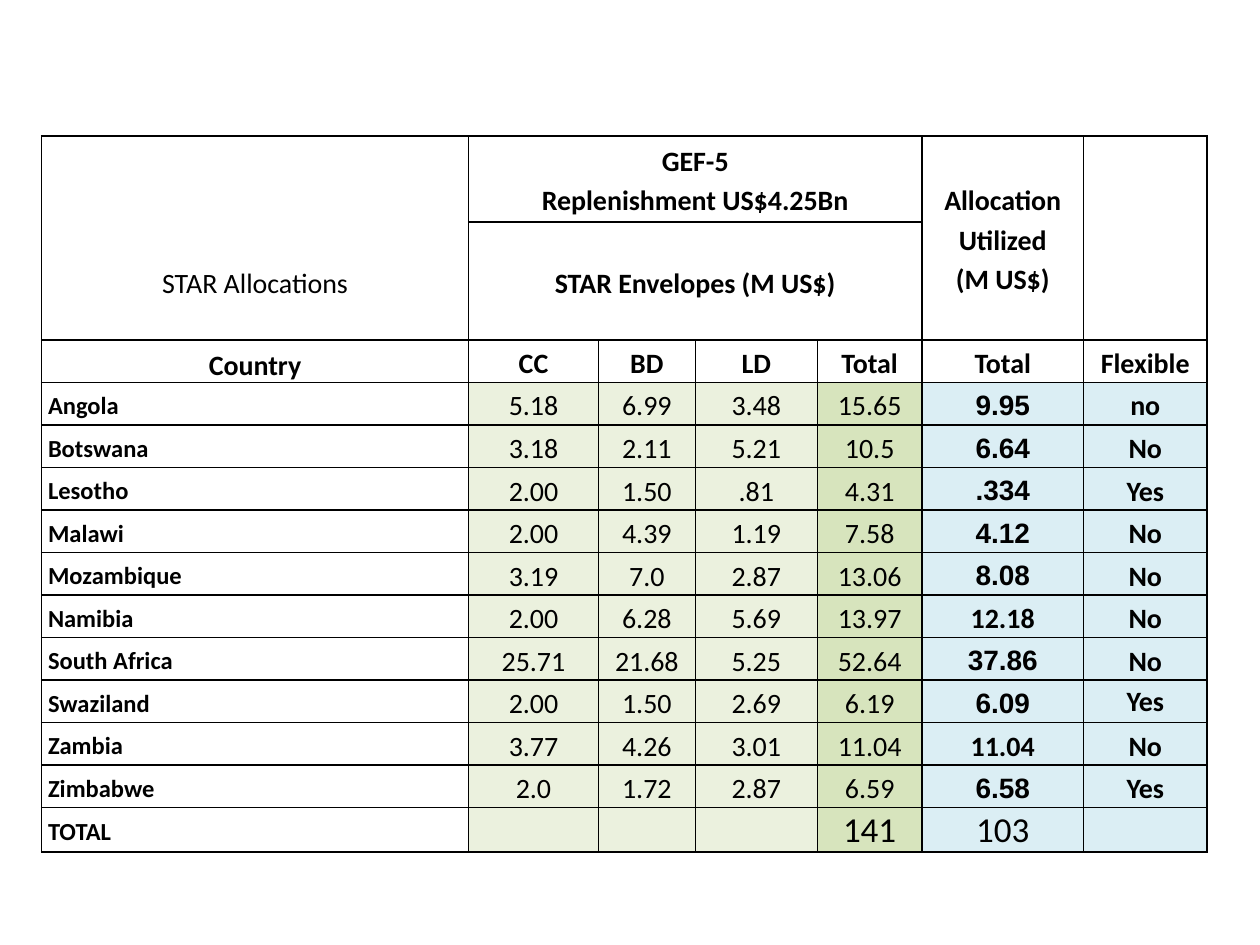
"""Build a slide with the table of STAR allocations by country."""
from lxml.etree import SubElement
from pptx import Presentation
from pptx.dml.color import RGBColor
from pptx.enum.text import MSO_ANCHOR, PP_ALIGN
from pptx.oxml import parse_xml
from pptx.oxml.ns import nsdecls
from pptx.util import Pt

PX = 914400 // 160
COLS = [542, 165, 123, 155, 133, 205, 157]
ROWS = [109, 62] + [54] * 11 + [50]
FILLS = ["FFFFFF"] + ["EBF1DE"] * 3 + ["D7E4BD"] + ["DBEEF4"] * 2
DATA = [
    ["STAR Allocations", "GEF-5\nReplenishment US$4.25Bn", "", "", "",
     "Allocation Utilized\n(M US$)", ""],
    ["", "STAR Envelopes (M US$)", "", "", "", "", ""],
    ["Country", "CC", "BD", "LD", "Total", "Total", "Flexible"],
    ["Angola", "5.18", "6.99", "3.48", "15.65", "9.95", "no"],
    ["Botswana", "3.18", "2.11", "5.21", "10.5", "6.64", "No"],
    ["Lesotho", "2.00", "1.50", ".81", "4.31", ".334", "Yes"],
    ["Malawi", "2.00", "4.39", "1.19", "7.58", "4.12", "No"],
    ["Mozambique", "3.19", "7.0", "2.87", "13.06", "8.08", "No"],
    ["Namibia", "2.00", "6.28", "5.69", "13.97", "12.18", "No"],
    ["South Africa", "25.71", "21.68", "5.25", "52.64", "37.86", "No"],
    ["Swaziland", "2.00", "1.50", "2.69", "6.19", "6.09", "Yes"],
    ["Zambia", "3.77", "4.26", "3.01", "11.04", "11.04", "No"],
    ["Zimbabwe", "2.0", "1.72", "2.87", "6.59", "6.58", "Yes"],
    ["TOTAL", "", "", "", "141", "103", ""],
]
MERGES = [(0, 0, 1, 0), (0, 1, 0, 4), (0, 5, 1, 5), (0, 6, 1, 6), (1, 1, 1, 4)]
CALIBRI_TOTALS = ["Namibia", "Zambia"]


def rgb(color):
    return RGBColor.from_string(color)


def add_borders(cell):
    tc_pr = cell._tc.get_or_add_tcPr()
    for i, side in enumerate(["lnL", "lnR", "lnT", "lnB"]):
        ln = parse_xml(f'<a:{side} {nsdecls("a")} w="12700"><a:solidFill>'
                       f'<a:srgbClr val="000000"/></a:solidFill></a:{side}>')
        tc_pr.insert(i, ln)


prs = Presentation()
prs.slide_width, prs.slide_height = 1600 * PX, 1200 * PX
s = prs.slides.add_slide(prs.slide_layouts[6])
table = s.shapes.add_table(len(ROWS), len(COLS), 53 * PX, 173 * PX,
                           sum(COLS) * PX, sum(ROWS) * PX).table
table.first_row = table.horz_banding = False
for col, width in zip(table.columns, COLS):
    col.width = width * PX
for row, height in zip(table.rows, ROWS):
    row.height = height * PX
for top, left, bottom, right in MERGES:
    table.cell(top, left).merge(table.cell(bottom, right))

last = len(ROWS) - 1
for r, values in enumerate(DATA):
    for c, text in enumerate(values):
        cell = table.cell(r, c)
        header, grand = r < 3, r == last and c > 0
        at_bottom = grand or (header and c == 0)
        side = 2 if grand else 8
        layout = {
            "margin_left": side * PX, "margin_right": side * PX,
            "margin_top": 2 * PX if grand and text else 0,
            "margin_bottom": 50 * PX if r == c == 0 else 0,
            "vertical_anchor": MSO_ANCHOR.BOTTOM if at_bottom else MSO_ANCHOR.MIDDLE,
        }
        for name, value in layout.items():
            setattr(cell, name, value)
        cell.fill.solid()
        cell.fill.fore_color.rgb = rgb("FFFFFF" if header else FILLS[c])
        add_borders(cell)
        if not text:
            end = SubElement(cell.text_frame.paragraphs[0]._p,
                             "{http://schemas.openxmlformats.org/drawingml/2006/main}endParaRPr")
            end.set("sz", "1400")
            continue
        arial = c == 5 and not header and not grand and values[0] not in CALIBRI_TOTALS
        single = grand or (values[0] == "Swaziland" and c == 6)
        font = {
            "name": "Arial" if arial else "Calibri",
            "size": Pt(20 if grand else 14 if c == 0 and not header else 16),
            "bold": (r, c) != (0, 0) and not grand and (header or c in (0, 5, 6)),
        }
        cell.text = text
        for p in cell.text_frame.paragraphs:
            p.alignment = PP_ALIGN.LEFT if c == 0 and not header else PP_ALIGN.CENTER
            p.line_spacing = 1.0 if single else 1.15
            run = p.runs[0]
            run.font.color.rgb = rgb("000000")
            for name, value in font.items():
                setattr(run.font, name, value)

prs.save("out.pptx")
